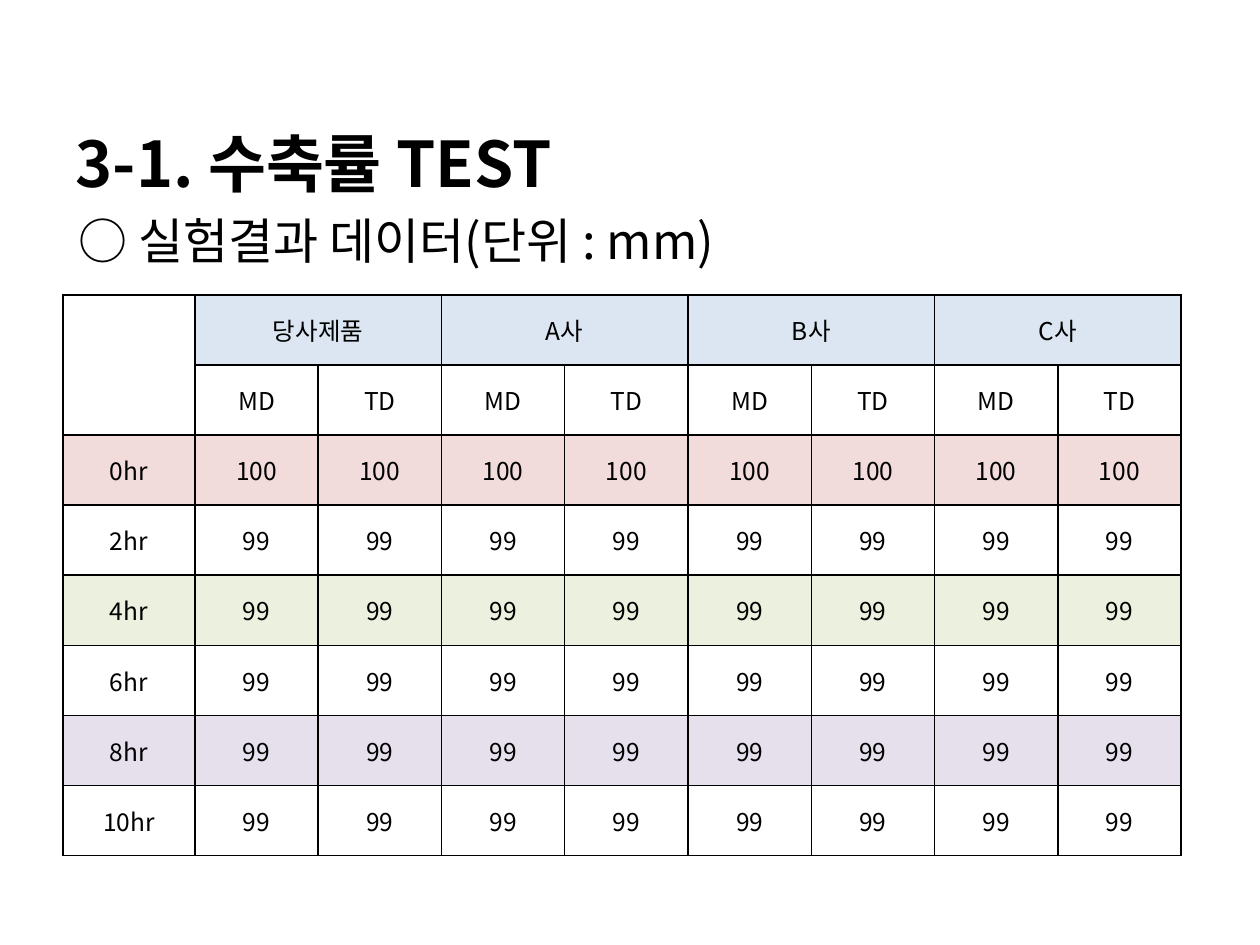
from lxml import etree
from pptx import Presentation
from pptx.dml.color import RGBColor
from pptx.enum import text
from pptx.oxml import ns
from pptx.util import Pt

HUES = {"ink": "000000", "head": "DCE6F2", "rose": "F2DCDB",
        "green": "EBF1DE", "lilac": "E6E0EC"}


class Deck:
    """Style and current slide."""
    face = "Noto Sans CJK KR"

    def __init__(self, wide, high):
        self.prs = Presentation()
        self.prs.slide_width, self.prs.slide_height = Pt(wide), Pt(high)
        self.slide = self.prs.slides.add_slide(self.prs.slide_layouts[5])

    def hue(self, name):
        return RGBColor.from_string(HUES[name])

    def add(self, para, words, size, bold=False):
        run = para.add_run()
        run.text = words
        font = run.font
        font.size, font.bold, font.name = Pt(size), bold, self.face
        font.color.rgb = self.hue("ink")
        # East Asian typeface for the Korean glyphs
        east = etree.SubElement(run._r.get_or_add_rPr(), ns.qn("a:ea"))
        east.set("typeface", self.face)

    def fit(self, frame):
        frame.word_wrap = True
        frame.auto_size = text.MSO_AUTO_SIZE.NONE
        frame.vertical_anchor = text.MSO_ANCHOR.BOTTOM
        para = frame.paragraphs[0]
        para.alignment = text.PP_ALIGN.LEFT
        return para

    def title(self, words, box):
        shape = self.slide.shapes.title
        shape.left, shape.top, shape.width, shape.height = map(Pt, box)
        self.add(self.fit(shape.text_frame), words, 36, True)

    def label(self, words, box):
        shape = self.slide.shapes.add_textbox(*map(Pt, box))
        para = self.fit(shape.text_frame)
        para.line_spacing = 0.9
        self.add(para, words, 28)

    def edge(self, cell):
        props = cell._tc.get_or_add_tcPr()
        for side in ("lnL", "lnR", "lnT", "lnB"):
            line = etree.SubElement(props, ns.qn("a:" + side), w=str(Pt(1)))
            fill = etree.SubElement(line, ns.qn("a:solidFill"))
            etree.SubElement(fill, ns.qn("a:srgbClr"), val=HUES["ink"])

    def cell(self, cell, words, tint):
        self.edge(cell)
        if tint:
            cell.fill.solid()
            cell.fill.fore_color.rgb = self.hue(tint)
        else:
            cell.fill.background()
        cell.vertical_anchor = text.MSO_ANCHOR.MIDDLE
        para = cell.text_frame.paragraphs[0]
        para.alignment = text.PP_ALIGN.CENTER
        if words:
            self.add(para, words, 14)

    def table(self, rows, tints, spot, widths, high):
        shape = self.slide.shapes.add_table(
            len(rows), len(widths), *map(Pt, spot),
            Pt(sum(widths)), Pt(high * len(rows)))
        grid = shape.table
        grid.first_row = grid.horz_banding = False
        for col, wide in zip(grid.columns, widths):
            col.width = Pt(wide)
        for r, (row, tint) in enumerate(zip(rows, tints)):
            grid.rows[r].height = Pt(high)
            for c, words in enumerate(row):
                self.cell(grid.cell(r, c), words, tint if r or c else None)
        return grid


def main():
    deck = Deck(720, 540)

    # Headings
    deck.title("3-1. 수축률 TEST", (36, 28, 648, 90))
    deck.label("○ 실험결과 데이터(단위 : mm)", (38, 118, 648, 39.6))

    # Shrinkage results: two header rows, then one row per time
    firms = ["당사제품", "A사", "B사", "C사"]
    top = [""]
    for firm in firms:
        top += [firm, ""]
    rows = [top, [""] + ["MD", "TD"] * len(firms)]
    for hour in range(0, 11, 2):
        rows.append([f"{hour}hr"] + ["99" if hour else "100"] * 8)
    tints = ["head", None, "rose", None, "green", None, "lilac", None]
    grid = deck.table(rows, tints, (36, 168.6), [75.4] + [70.45] * 8, 40.05)

    # Joined header cells
    grid.cell(0, 0).merge(grid.cell(1, 0))
    for c in range(1, 9, 2):
        grid.cell(0, c).merge(grid.cell(0, c + 1))

    deck.prs.save("out.pptx")


if __name__ == "__main__":
    main()
